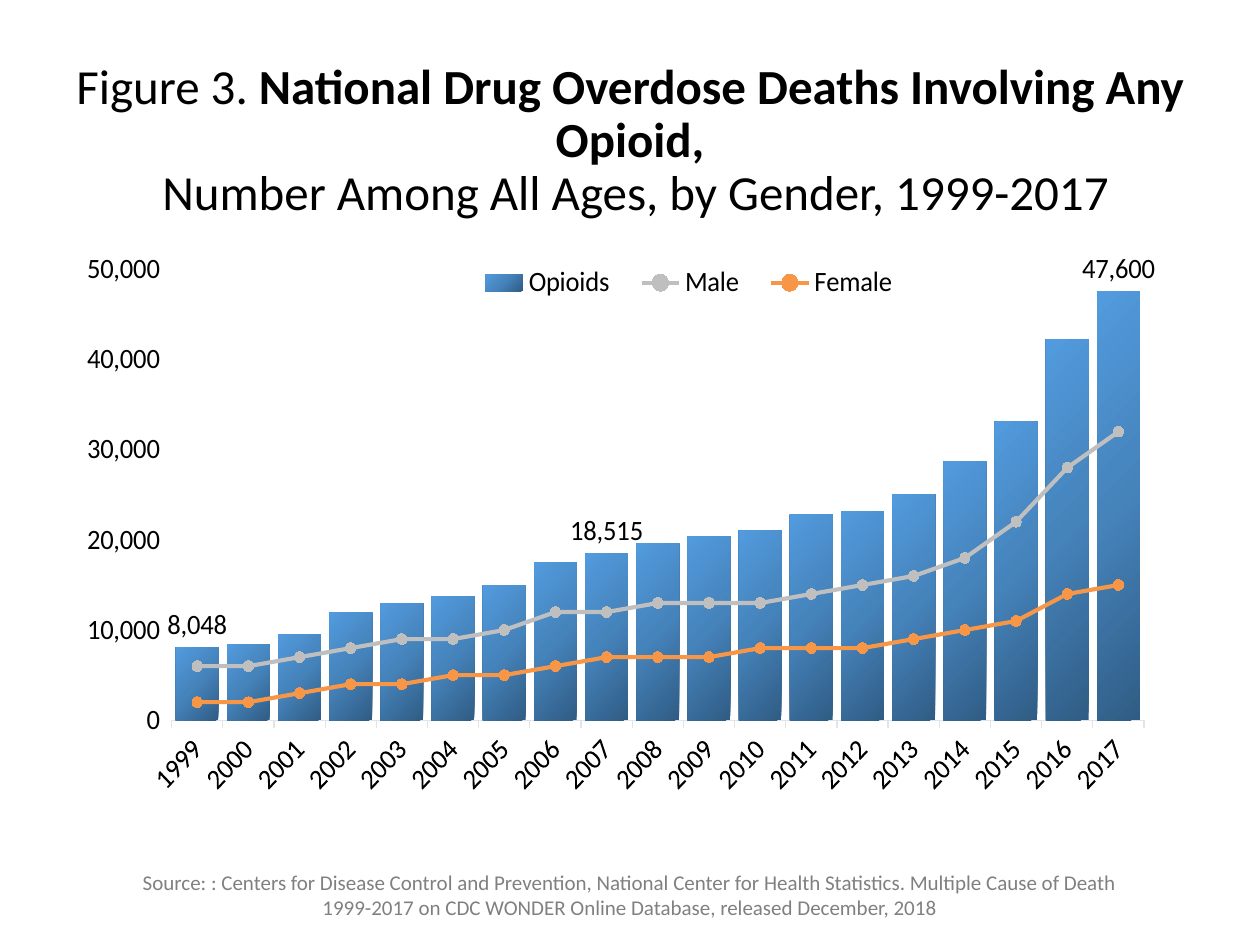
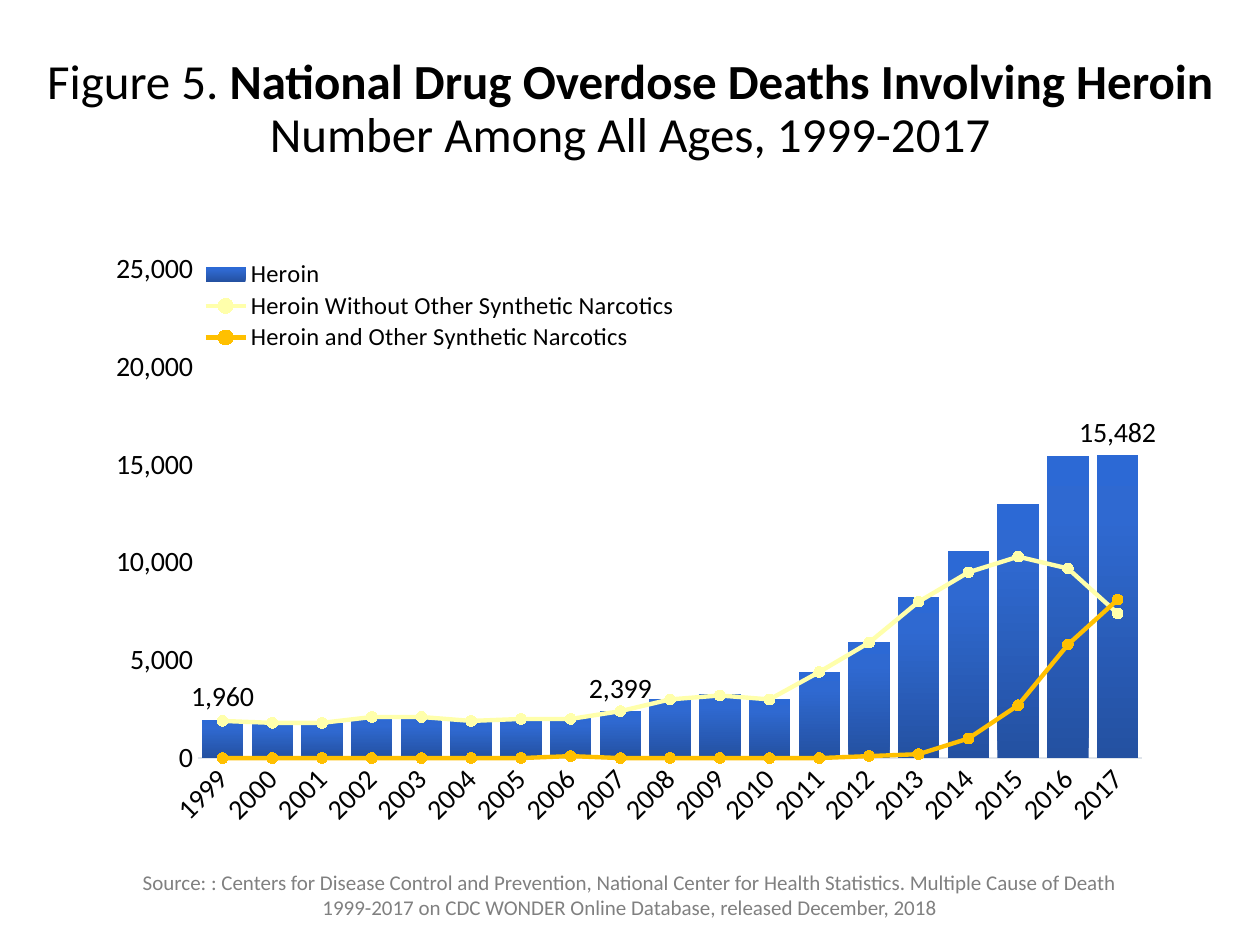
from dataclasses import dataclass

from lxml.etree import SubElement
from pptx import Presentation
from pptx.chart.data import CategoryChartData
from pptx.dml.color import RGBColor
from pptx.enum.chart import XL_CHART_TYPE as ChartType
from pptx.enum.chart import XL_LABEL_POSITION as LabelPos
from pptx.enum.chart import XL_LEGEND_POSITION as LegendPos
from pptx.enum.chart import XL_MARKER_STYLE as MarkerStyle
from pptx.enum.chart import XL_TICK_MARK as Tick
from pptx.enum.text import MSO_ANCHOR as Anchor
from pptx.enum.text import MSO_AUTO_SIZE as AutoSize
from pptx.enum.text import PP_ALIGN as Align
from pptx.oxml import parse_xml
from pptx.oxml.ns import nsdecls, qn
from pptx.util import Pt

# ---- Content ----
YEARS = [str(year) for year in range(1999, 2018)]
LABELLED_YEARS = ("1999", "2007", "2017")
SOURCE = (
    "Source: : Centers for Disease Control and Prevention, National Center for "
    "Health Statistics. Multiple Cause of Death 1999-2017 on CDC WONDER Online "
    "Database, released December, 2018"
)
FIGURES = [
    {
        "number": "Figure 3. ",
        "topic": "National Drug Overdose Deaths Involving Any Opioid,",
        "scope": " Number Among All Ages, by Gender, 1999-2017",
        "title_top": 28.8,
        "chart_height": 324.7,
        "plot": (0.028, 0.029, 0.944, 0.795),
        "legend": (0.31, 0.015, 0.44, 0.075),
        "legend_size": 16,
        "axis_max": 50000,
        "axis_step": 10000,
        "tick": Tick.OUTSIDE,
        "gradient": ([(0, "305C84"), (50, "4583BB"), (100, "529BDE")], 225),
        "total": ("Opioids", [
            8048, 8407, 9492, 11917, 12939, 13755, 14917, 17545, 18515, 19582,
            20422, 21088, 22784, 23164, 25050, 28647, 33091, 42249, 47600]),
        "parts": [
            ("Male", "BFBFBF", [
                6000, 6000, 7000, 8000, 9000, 9000, 10000, 12000, 12000, 13000,
                13000, 13000, 14000, 15000, 16000, 18000, 22000, 28000, 32000]),
            ("Female", "F79646", [
                2000, 2000, 3000, 4000, 4000, 5000, 5000, 6000, 7000, 7000,
                7000, 8000, 8000, 8000, 9000, 10000, 11000, 14000, 15000]),
        ],
    },
    {
        "number": "Figure 5. ",
        "topic": "National Drug Overdose Deaths Involving Heroin",
        "scope": "Number Among All Ages, 1999-2017",
        "title_top": 10.8,
        "chart_height": 342.7,
        "plot": (0.102, 0.029, 0.87, 0.815),
        "legend": (0.1, 0.01, 0.45, 0.16),
        "legend_size": 14,
        "axis_max": 25000,
        "axis_step": 5000,
        "tick": Tick.NONE,
        "gradient": ([(0, "2451A1"), (80, "2F69D1"), (100, "2C69D5")], 270),
        "total": ("Heroin", [
            1960, 1842, 1779, 2089, 2080, 1878, 2009, 2088, 2399, 3041,
            3278, 3036, 4397, 5925, 8257, 10574, 12989, 15469, 15482]),
        "parts": [
            ("Heroin Without Other Synthetic Narcotics", "FFFFAB", [
                1900, 1800, 1800, 2100, 2100, 1900, 2000, 2000, 2400, 3000,
                3200, 3000, 4400, 5900, 8000, 9500, 10300, 9700, 7400]),
            ("Heroin and Other Synthetic Narcotics", "FFC000", [
                0, 0, 0, 0, 0, 0, 0, 100, 0, 0,
                0, 0, 0, 100, 200, 1000, 2700, 5800, 8100]),
        ],
    },
]


# ---- Shared look ----
@dataclass(frozen=True)
class Theme:
    font: str = "Calibri"
    ink: str = "000000"
    source_ink: str = "808080"
    axis_line: str = "E0E5EB"
    title_size: float = 28
    chart_size: float = 16
    source_size: float = 12
    line_width: float = 2.5
    marker_size: int = 6
    number_format: str = "#,##0"


THEME = Theme()
SLIDE_WIDTH, SLIDE_HEIGHT = 720, 540
TITLE_HEIGHT = 104.4
CHART_LEFT, CHART_TOP, CHART_WIDTH = 49.7, 144, 620.6
SOURCE_BOX = (73.4, 493.2, 573.1, 36)


def set_all(target, values):
    for name, value in values.items():
        setattr(target, name, value)


def style_font(font, size, color=THEME.ink, bold=False):
    set_all(font, {"name": THEME.font, "size": Pt(size), "bold": bold})
    font.color.rgb = RGBColor.from_string(color)


def add_text(slide, box, anchor, auto_size):
    """Add a wrapped text box and return its centred paragraph."""
    frame = slide.shapes.add_textbox(*map(Pt, box)).text_frame
    set_all(frame, {"word_wrap": True, "vertical_anchor": anchor,
                    "auto_size": auto_size})
    paragraph = frame.paragraphs[0]
    paragraph.alignment = Align.CENTER
    return paragraph


def add_run(paragraph, text, size, color=THEME.ink, bold=False):
    run = paragraph.add_run()
    run.text = text
    style_font(run.font, size, color, bold)


def add_title(slide, figure):
    box = (0, figure["title_top"], SLIDE_WIDTH, TITLE_HEIGHT)
    title = add_text(slide, box, Anchor.MIDDLE, AutoSize.NONE)
    title.line_spacing = 0.9
    add_run(title, figure["number"], THEME.title_size)
    add_run(title, figure["topic"], THEME.title_size, bold=True)
    title.add_line_break()
    add_run(title, figure["scope"], THEME.title_size)


def add_source(slide):
    source = add_text(slide, SOURCE_BOX, Anchor.TOP, AutoSize.SHAPE_TO_FIT_TEXT)
    add_run(source, SOURCE, THEME.source_size, THEME.source_ink)


# ---- Chart parts that need XML ----
def remove_children(parent, tag):
    for child in parent.findall(qn(tag)):
        parent.remove(child)


def manual_layout(box, inner=False):
    target = '<c:layoutTarget val="inner"/>' if inner else ""
    modes = "".join(f'<c:{side}Mode val="edge"/>' for side in "xy")
    sizes = "".join(f'<c:{side} val="{value}"/>' for side, value in zip("xywh", box))
    return parse_xml(f'<c:layout {nsdecls("c")}><c:manualLayout>{target}{modes}'
                     f"{sizes}</c:manualLayout></c:layout>")


def place(parent, layout, index):
    remove_children(parent, "c:layout")
    parent.insert(index, layout)


def move_parts_to_lines(chart):
    """Keep the first series as columns and turn the others into lines."""
    bars = chart.plots[0]._element
    lines = parse_xml(f'<c:lineChart {nsdecls("c")}><c:grouping val="standard"/>'
                      '<c:varyColors val="0"/></c:lineChart>')
    for series in bars.findall(qn("c:ser"))[1:]:
        remove_children(series, "c:invertIfNegative")
        lines.append(series)
    SubElement(lines, qn("c:marker")).set("val", "1")
    for axis in bars.findall(qn("c:axId")):
        SubElement(lines, qn("c:axId")).set("val", axis.get("val"))
    bars.addnext(lines)


def fill_gradient(fill, stops, angle):
    fill.gradient()
    gradient = fill._xPr.find(qn("a:gradFill"))
    for child in list(gradient):
        gradient.remove(child)
    stop_list = SubElement(gradient, qn("a:gsLst"))
    for position, color in stops:
        stop = SubElement(stop_list, qn("a:gs"), pos=str(position * 1000))
        SubElement(stop, qn("a:srgbClr"), val=color)
    SubElement(gradient, qn("a:lin"), ang=str(angle * 60000), scaled="0")


# ---- Chart ----
def style_axes(chart, figure):
    years, deaths = chart.category_axis, chart.value_axis
    for axis in (years, deaths):
        set_all(axis, {"has_major_gridlines": False,
                       "major_tick_mark": figure["tick"],
                       "minor_tick_mark": Tick.NONE})
        style_font(axis.tick_labels.font, THEME.chart_size)
    years.format.line.color.rgb = RGBColor.from_string(THEME.axis_line)
    years.format.line.width = Pt(0.75)
    years._element.txPr.find(qn("a:bodyPr")).set("rot", str(-45 * 60000))
    set_all(deaths, {"minimum_scale": 0, "maximum_scale": figure["axis_max"],
                     "major_unit": figure["axis_step"]})
    set_all(deaths.tick_labels, {"number_format": THEME.number_format,
                                 "number_format_is_linked": False})
    deaths.format.line.fill.background()


def style_total(columns, figure):
    set_all(columns, {"gap_width": 20, "vary_by_categories": False})
    total = columns.series[0]
    fill_gradient(total.format.fill, *figure["gradient"])
    total.format.line.fill.background()
    total.data_labels.show_value = False
    for year in LABELLED_YEARS:
        label = total.points[YEARS.index(year)].data_label
        style_font(label.font, THEME.chart_size)
        label.position = LabelPos.OUTSIDE_END


def style_parts(lines, parts):
    for series, (_, color, _) in zip(lines.series, parts):
        rgb = RGBColor.from_string(color)
        series.smooth = False
        series.format.line.color.rgb = rgb
        series.format.line.width = Pt(THEME.line_width)
        set_all(series.marker, {"style": MarkerStyle.CIRCLE,
                                "size": THEME.marker_size})
        series.marker.format.fill.solid()
        series.marker.format.fill.fore_color.rgb = rgb
        series.marker.format.line.color.rgb = rgb


def add_deaths_chart(slide, figure):
    data = CategoryChartData(number_format=THEME.number_format)
    data.categories = YEARS
    data.add_series(*figure["total"])
    for name, _, deaths in figure["parts"]:
        data.add_series(name, deaths)
    box = (CHART_LEFT, CHART_TOP, CHART_WIDTH, figure["chart_height"])
    chart = slide.shapes.add_chart(
        ChartType.COLUMN_CLUSTERED, *map(Pt, box), data).chart
    set_all(chart, {"has_title": False, "has_legend": True})
    style_font(chart.font, THEME.chart_size)

    move_parts_to_lines(chart)
    columns, lines = chart.plots
    style_total(columns, figure)
    style_parts(lines, figure["parts"])
    style_axes(chart, figure)

    legend = chart.legend
    set_all(legend, {"position": LegendPos.BOTTOM, "include_in_layout": False})
    style_font(legend.font, figure["legend_size"])
    place(legend._element, manual_layout(figure["legend"]), 1)
    plot_area = columns._element.getparent()
    place(plot_area, manual_layout(figure["plot"], inner=True), 0)


def main():
    deck = Presentation()
    set_all(deck, {"slide_width": Pt(SLIDE_WIDTH), "slide_height": Pt(SLIDE_HEIGHT)})
    for figure in FIGURES:
        slide = deck.slides.add_slide(deck.slide_layouts[6])
        add_title(slide, figure)
        add_source(slide)
        add_deaths_chart(slide, figure)
    deck.save("out.pptx")


if __name__ == "__main__":
    main()
